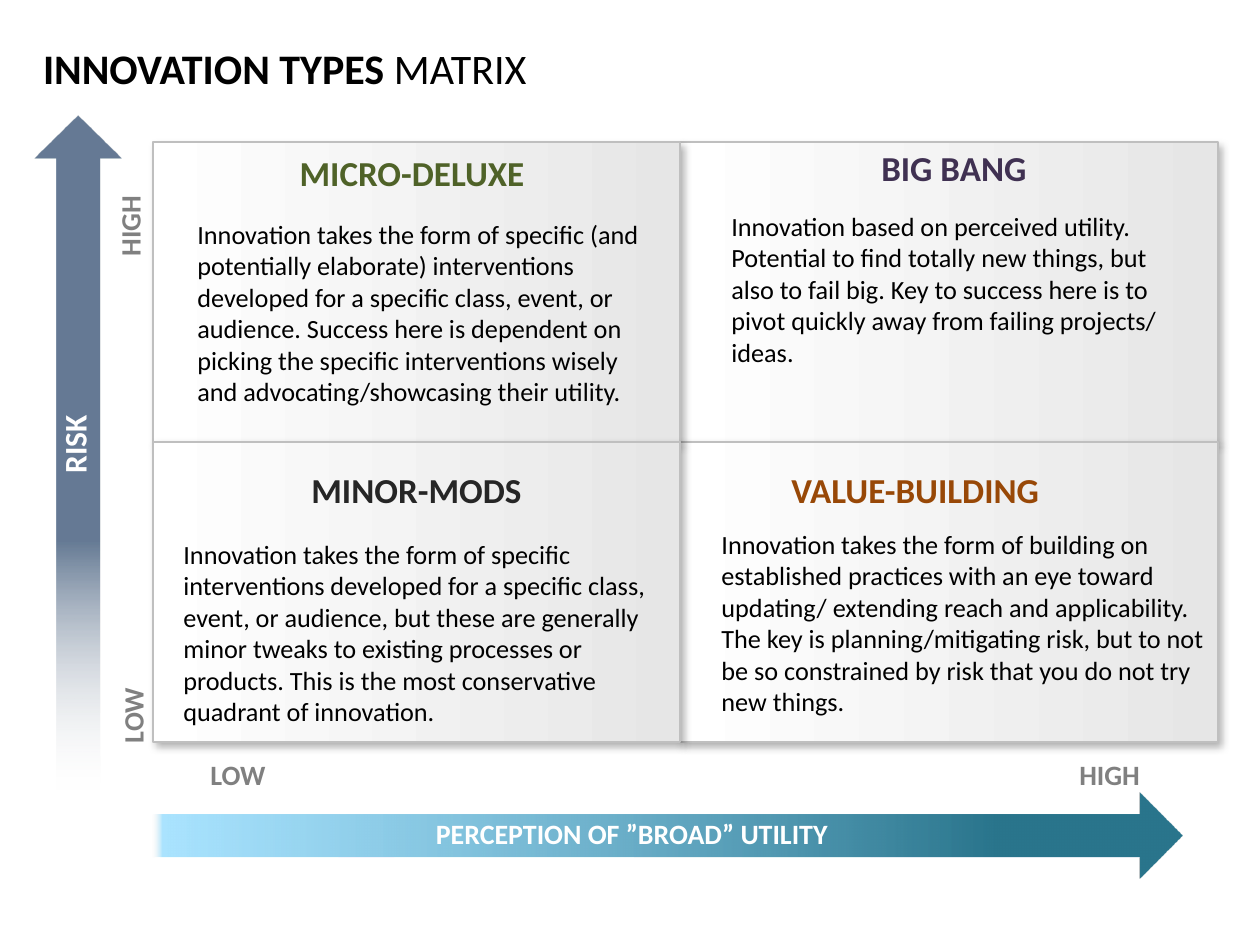
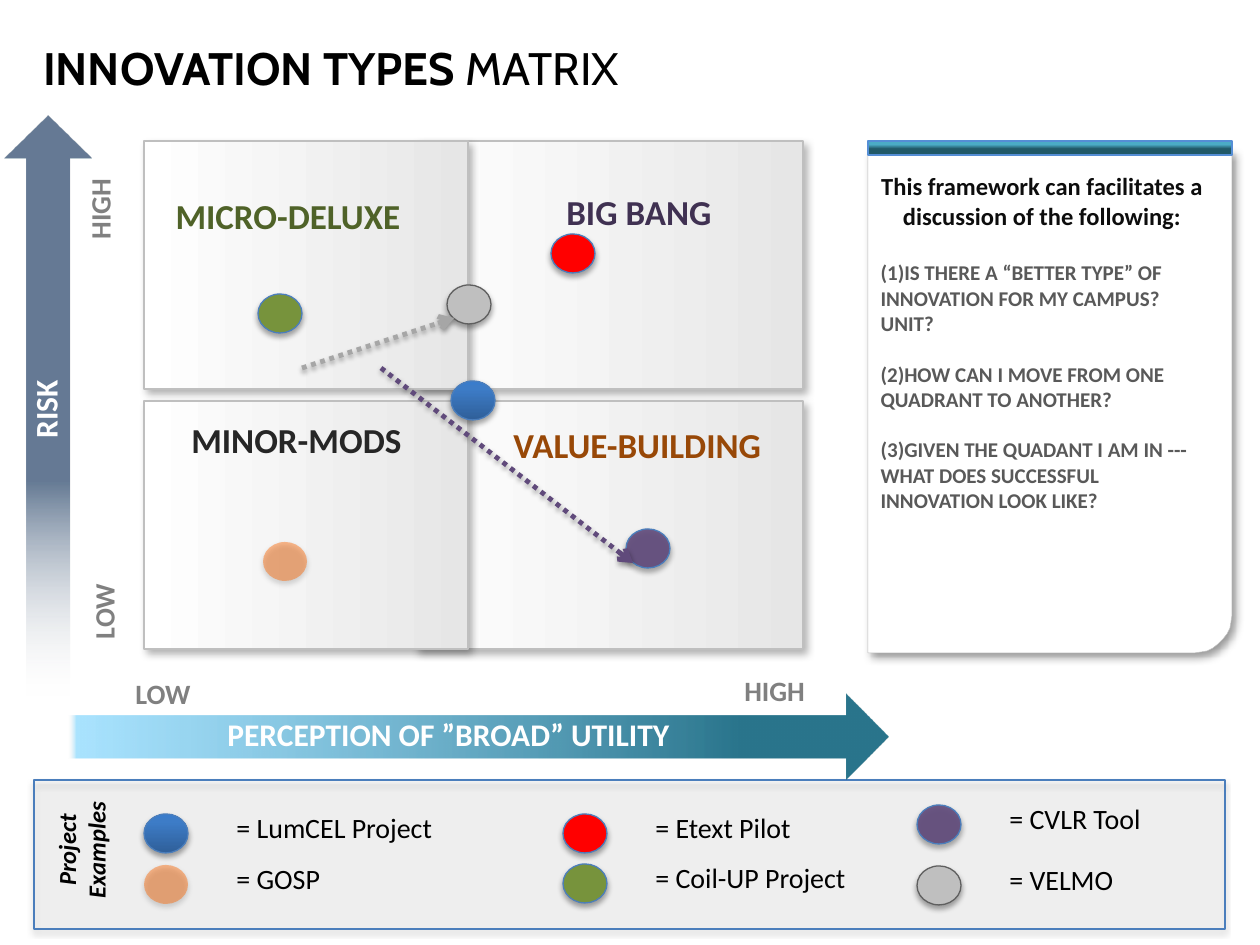
import math
from collections import namedtuple

import pptx
import pptx.dml.color
import pptx.enum.dml
import pptx.enum.shapes
import pptx.enum.text
import pptx.oxml
import pptx.oxml.ns
import pptx.util
from lxml import etree

RGBColor = pptx.dml.color.RGBColor
SHAPE = pptx.enum.shapes.MSO_SHAPE
ALIGN = pptx.enum.text.PP_ALIGN
ANCHOR = pptx.enum.text.MSO_ANCHOR
qn = pptx.oxml.ns.qn

# Lengths are px; one scale turns them into EMU
PX = 914400 / 126
SLIDE_W, SLIDE_H = 1260, 945

# Colours
BLACK = RGBColor(0x00, 0x00, 0x00)
WHITE = RGBColor(0xFF, 0xFF, 0xFF)
PALE = RGBColor(0xE6, 0xE6, 0xE6)
LEGEND_FILL = RGBColor(0xF2, 0xF2, 0xF2)
BORDER = RGBColor(0xBF, 0xBF, 0xBF)
AXIS_GREY = RGBColor(0x80, 0x80, 0x80)
DOT_EDGE = RGBColor(0x5F, 0x5F, 0x5F)
ARROW_GREY = RGBColor(0xA6, 0xA6, 0xA6)
QUESTION = RGBColor(0x59, 0x59, 0x59)
INTRO = RGBColor(0x0D, 0x0D, 0x0D)
NAVY = RGBColor(0x17, 0x37, 0x5E)
TEAL = RGBColor(0x22, 0x70, 0x88)
SKY = RGBColor(0x7F, 0xD6, 0xFF)
BLUE_EDGE = RGBColor(0x4B, 0x7E, 0xBC)
BLUE_DARK = RGBColor(0x2F, 0x5F, 0x99)
BLUE_MID = RGBColor(0x3D, 0x7C, 0xC7)
BLUE_LIGHT = RGBColor(0x3A, 0x7C, 0xCB)
STRIP_DARK = RGBColor(0x21, 0x59, 0x68)
STRIP_LIGHT = RGBColor(0x4B, 0xAC, 0xC6)
STRIP_EDGE = RGBColor(0x55, 0x8E, 0xD5)
RED = RGBColor(0xFF, 0x00, 0x00)
ORANGE = RGBColor(0xFF, 0x66, 0x00)
GREEN = RGBColor(0x77, 0x93, 0x3C)
PURPLE = RGBColor(0x60, 0x4A, 0x7B)
MICRO = RGBColor(0x4F, 0x62, 0x28)
BANG = RGBColor(0x40, 0x31, 0x52)
MINOR = RGBColor(0x26, 0x26, 0x26)
VALUE = RGBColor(0x98, 0x48, 0x07)

# Fills: stops are (percent, colour, opacity); angles run anticlockwise
Solid = namedtuple("Solid", "colour opacity", defaults=[100])
Gradient = namedtuple("Gradient", "stops angle")
Shadow = namedtuple("Shadow", "opacity blur distance angle")

QUADRANT_FILL = Gradient([(0, WHITE, 100), (100, PALE, 100)], 0)
RISK_FILL = Gradient([(63, NAVY, 66), (100, PALE, 0)], 270)
UTILITY_FILL = Gradient([(18, TEAL, 96), (99, SKY, 66), (100, PALE, 0)], 180)
STRIP_FILL = Gradient([(44, STRIP_DARK, 100), (73, STRIP_LIGHT, 100)], 90)
BLUE_FILL = Gradient(
    [(0, BLUE_DARK, 100), (80, BLUE_MID, 100), (100, BLUE_LIGHT, 100)], 90)

QUADRANT_SHADOW = Shadow(30, 4.5, 2.6, 53)
PANEL_SHADOW = Shadow(40, 5, 3, 45)
DOT_SHADOW = Shadow(35, 3.1, 1.8, 90)
ARROW_SHADOW = Shadow(38, 3.1, 1.6, 90)

# Projects: name, fill, edge, legend place, matrix place
PROJECTS = [
    ("LumCEL Project", BLUE_FILL, BLUE_EDGE, (144, 814), (451, 381)),
    ("GOSP", Solid(ORANGE, 43), None, (144, 865), (263, 542)),
    ("Etext Pilot", Solid(RED), BLUE_EDGE, (563, 814), (551, 234)),
    ("Coil-UP Project", Solid(GREEN), BLUE_EDGE, (563, 864), (258, 294)),
    ("CVLR Tool", Solid(PURPLE, 90), BLUE_EDGE, (917, 805), (626, 529)),
    ("VELMO", Solid(BORDER), DOT_EDGE, (917, 866), (447, 285)),
]

# Quadrant headings: colour, alignment, frame on each slide
HEADINGS = [
    ("MICRO-DELUXE", MICRO, ALIGN.CENTER, (170, 145, 484, 55), (132, 188, 312, 55)),
    ("BIG BANG", BANG, ALIGN.CENTER, (726, 140, 456, 55), (510, 184, 258, 55)),
    ("MINOR-MODS", MINOR, ALIGN.CENTER, (263, 462, 307, 55), (176, 412, 241, 55)),
    ("VALUE-BUILDING", VALUE, ALIGN.LEFT, (779, 462, 403, 55), (501, 417, 297, 55)),
]

DESCRIPTIONS = [
    ("Innovation based on perceived utility. Potential to find totally new "
     "things, but also to fail big. Key to success here is to pivot quickly "
     "away from failing projects/ ideas.", (719, 204, 476, 171)),
    ("Innovation takes the form of specific (and potentially elaborate) "
     "interventions developed for a specific class, event, or audience. "
     "Success here is dependent on picking the specific interventions wisely "
     "and advocating/showcasing their utility.", (185, 212, 484, 204)),
    ("Innovation takes the form of specific interventions developed for a "
     "specific class, event, or audience, but these are generally minor tweaks "
     "to existing processes or products. This is the most conservative "
     "quadrant of innovation.", (171, 532, 498, 204)),
    ("Innovation takes the form of building on established practices with an "
     "eye toward updating/ extending reach and applicability. The key is "
     "planning/mitigating risk, but to not be so constrained by risk that you "
     "do not try new things.", (709, 522, 508, 204)),
]

QUESTIONS = [
    "IS THERE A “BETTER TYPE” OF INNOVATION FOR MY CAMPUS? UNIT?",
    "HOW CAN I MOVE FROM ONE QUADRANT TO ANOTHER?",
    "GIVEN THE QUADANT I AM IN --- WHAT DOES SUCCESSFUL INNOVATION LOOK LIKE?",
]


def emu(*lengths):
    return [pptx.util.Emu(round(length * PX)) for length in lengths]


def set_all(target, values):
    for name, value in values.items():
        setattr(target, name, value)


def place(shape, frame):
    set_all(shape, dict(zip(("left", "top", "width", "height"), emu(*frame))))


def add_colour(parent, colour, opacity):
    """Append a colour with its opacity in percent."""
    node = etree.SubElement(parent, qn("a:srgbClr"), val=str(colour))
    if opacity < 100:
        etree.SubElement(node, qn("a:alpha"), val=str(opacity * 1000))


def add_shadow(effects, shadow):
    outer = etree.SubElement(
        effects, qn("a:outerShdw"),
        blurRad=str(pptx.util.Pt(shadow.blur)),
        dist=str(pptx.util.Pt(shadow.distance)),
        dir=str(shadow.angle * 60000), algn="ctr", rotWithShape="0")
    add_colour(outer, BLACK, shadow.opacity)


def paint(shape, fill, edge=None, edge_pt=0.75, shadow=None):
    """Give a shape its fill, edge and shadow."""
    properties = shape.element.spPr
    if isinstance(fill, Gradient):
        shape.fill.gradient()
        shape.fill.gradient_angle = fill.angle
        stops = properties.find(qn("a:gradFill")).find(qn("a:gsLst"))
        for stop in list(stops):
            stops.remove(stop)
        for percent, colour, opacity in fill.stops:
            stop = etree.SubElement(stops, qn("a:gs"), pos=str(percent * 1000))
            add_colour(stop, colour, opacity)
    else:
        shape.fill.solid()
        shape.fill.fore_color.rgb = fill.colour
        if fill.opacity < 100:
            colour = properties.find(qn("a:solidFill"))[0]
            etree.SubElement(colour, qn("a:alpha"), val=str(fill.opacity * 1000))
    if edge is None:
        shape.line.fill.background()
    else:
        shape.line.color.rgb = edge
        shape.line.width = pptx.util.Pt(edge_pt)
    shape.shadow.inherit = False
    if shadow:
        add_shadow(properties.find(qn("a:effectLst")), shadow)


def add_figure(slide, kind, frame, fill, **look):
    paint(slide.shapes.add_shape(kind, *emu(*frame)), fill, **look)


def add_run(paragraph, text, size, colour, name="Calibri", **font):
    run = paragraph.add_run()
    run.text = text
    run.font.color.rgb = colour
    set_all(run.font, {"size": pptx.util.Pt(size), "name": name, **font})


def add_label(slide, text, frame, size, colour, align=ALIGN.LEFT, turn=0, **font):
    label = slide.shapes.add_textbox(*emu(*frame))
    label.rotation = turn
    label.text_frame.word_wrap = True
    paragraph = label.text_frame.paragraphs[0]
    paragraph.alignment = align
    add_run(paragraph, text, size, colour, **font)


def add_title(slide, size, font_name):
    title = slide.shapes.title
    place(title, (43, 26, 1174, 83))
    set_all(title.text_frame, {
        "margin_left": 0, "margin_right": 0, "word_wrap": True,
        "vertical_anchor": ANCHOR.MIDDLE,
        "auto_size": pptx.enum.text.MSO_AUTO_SIZE.NONE})
    paragraph = title.text_frame.paragraphs[0]
    paragraph.alignment = ALIGN.LEFT
    add_run(paragraph, "INNOVATION TYPES ", size, BLACK, font_name, bold=True)
    add_run(paragraph, "MATRIX", size, BLACK, font_name, bold=False)


def add_quadrants(slide, columns, rows, height):
    """Draw the 2 by 2 grid; columns are (left, width), later ones on top."""
    for left, width in columns:
        for top in rows:
            add_figure(slide, SHAPE.RECTANGLE, (left, top, width, height),
                       QUADRANT_FILL, edge=BORDER, shadow=QUADRANT_SHADOW)


def add_axes(slide, utility, risk, utility_label, utility_size, risk_label):
    add_figure(slide, SHAPE.RIGHT_ARROW, utility, UTILITY_FILL)
    add_figure(slide, SHAPE.UP_ARROW, risk, RISK_FILL)
    add_label(slide, "PERCEPTION OF ”BROAD” UTILITY", utility_label,
              utility_size, WHITE, ALIGN.CENTER, bold=True)
    add_label(slide, "RISK", risk_label, 18, WHITE, ALIGN.CENTER, 270, bold=True)


def add_axis_ends(slide, ends):
    for text, left, top, turn in ends:
        add_label(slide, text, (left, top, 100, 47), 16, AXIS_GREY,
                  turn=turn, bold=True)


def add_headings(slide, frame_index):
    for text, colour, align, *frames in HEADINGS:
        add_label(slide, text, frames[frame_index], 20, colour, align, bold=True)


def add_dotted_arrow(slide, start, end, colour):
    arrow = slide.shapes.add_connector(
        pptx.enum.shapes.MSO_CONNECTOR.STRAIGHT, *emu(*start, *end))
    arrow.line.color.rgb = colour
    set_all(arrow.line, {"width": pptx.util.Pt(2.75),
                         "dash_style": pptx.enum.dml.MSO_LINE.ROUND_DOT})
    properties = arrow.element.spPr
    etree.SubElement(properties.find(qn("a:ln")), qn("a:tailEnd"), type="arrow")
    add_shadow(etree.SubElement(properties, qn("a:effectLst")), ARROW_SHADOW)


def add_panel(slide, left, top, right, bottom, radius):
    """Draw the discussion card with its lower right corner rounded."""
    corner = [(right - radius + radius * math.sin(math.radians(a)),
               bottom - radius + radius * math.cos(math.radians(a)))
              for a in range(0, 91, 10)]
    outline = slide.shapes.build_freeform(left, bottom, scale=PX)
    outline.add_line_segments([*corner, (right, top), (left, top)], close=True)
    paint(outline.convert_to_shape(), Solid(WHITE), edge=BORDER, edge_pt=0.25,
          shadow=PANEL_SHADOW)
    add_figure(slide, SHAPE.RECTANGLE, (left, top - 10, right - left, 14),
               STRIP_FILL, edge=STRIP_EDGE)


def add_questions(slide):
    body = slide.placeholders[1]
    place(body, (868, 165, 348, 518))
    slide.shapes.element.append(body.element)  # in front of the card
    body.text_frame.auto_size = pptx.enum.text.MSO_AUTO_SIZE.NONE
    intro = body.text_frame.paragraphs[0]
    intro.alignment = ALIGN.CENTER
    add_run(intro, "This framework can facilitates a discussion of the following:",
            14, INTRO, bold=True)
    items = [body.text_frame.add_paragraph() for _ in QUESTIONS]
    for item, question in zip(items, QUESTIONS):
        add_run(item, question, 12, QUESTION, bold=True)
    for paragraph, gap in zip([intro, *items], (0, 17, 14.6, 14.6)):
        paragraph.space_before = pptx.util.Pt(gap)
        properties = paragraph.element.get_or_add_pPr() if hasattr(
            paragraph, "element") else paragraph._p.get_or_add_pPr()
        properties.set("marL", "0")
        properties.set("indent", "0")
        if paragraph is intro:
            etree.SubElement(properties, qn("a:buNone"))
        else:
            etree.SubElement(properties, qn("a:buFont"), typeface="+mj-lt")
            etree.SubElement(properties, qn("a:buAutoNum"), type="arabicParenBoth")


def add_legend_and_dots(slide):
    for name, fill, edge, (left, top), spot in PROJECTS:
        for corner in ((left, top), spot):
            add_figure(slide, SHAPE.OVAL, (*corner, 44, 39), fill, edge=edge,
                       shadow=DOT_SHADOW)
        add_label(slide, "= " + name, (left + 80, top - 10, 258, 47), 16, BLACK)
    add_label(slide, "Project Examples", (3, 814, 157, 72), 14, BLACK,
              ALIGN.CENTER, 270, bold=True, italic=True)


def build_definitions(slide):
    add_quadrants(slide, [(680, 538), (153, 527)], (142, 442), 300)
    add_axes(slide, (153, 793, 1029, 86), (35, 116, 86, 674),
             (349, 810, 566, 47), 16, (29, 419, 90, 50))
    add_title(slide, 24, "Calibri")
    add_axis_ends(slide, [("HIGH", 1067, 751, 0), ("LOW", 198, 751, 0),
                          ("LOW", 83, 682, 270), ("HIGH", 80, 195, 270)])
    add_headings(slide, 0)
    for text, frame in DESCRIPTIONS:
        add_label(slide, text, frame, 15, BLACK)


def build_examples(slide):
    add_figure(slide, SHAPE.RECTANGLE, (34, 780, 1191, 149),
               Solid(LEGEND_FILL, 20), edge=BLUE_EDGE, shadow=DOT_SHADOW)
    add_quadrants(slide, [(416, 387), (144, 324)], (141, 401), 248)
    add_axes(slide, (69, 694, 819, 86), (5, 116, 86, 580),
             (208, 709, 481, 50), 18, (0, 384, 90, 50))
    add_title(slide, 26, "Cabin")
    add_axis_ends(slide, [("HIGH", 732, 667, 0), ("LOW", 123, 670, 0),
                          ("LOW", 54, 578, 270), ("HIGH", 50, 178, 270)])
    add_headings(slide, 1)
    add_panel(slide, 868, 151, 1232, 653, 38)
    add_questions(slide)
    add_legend_and_dots(slide)
    add_dotted_arrow(slide, (302, 368), (454, 318), ARROW_GREY)
    add_dotted_arrow(slide, (381, 368), (633, 563), PURPLE)


def main():
    deck = pptx.Presentation()
    deck.slide_width, deck.slide_height = emu(SLIDE_W, SLIDE_H)
    # Layout 5 has a title only; layout 1 adds a body
    build_definitions(deck.slides.add_slide(deck.slide_layouts[5]))
    build_examples(deck.slides.add_slide(deck.slide_layouts[1]))
    deck.save("out.pptx")


if __name__ == "__main__":
    main()
